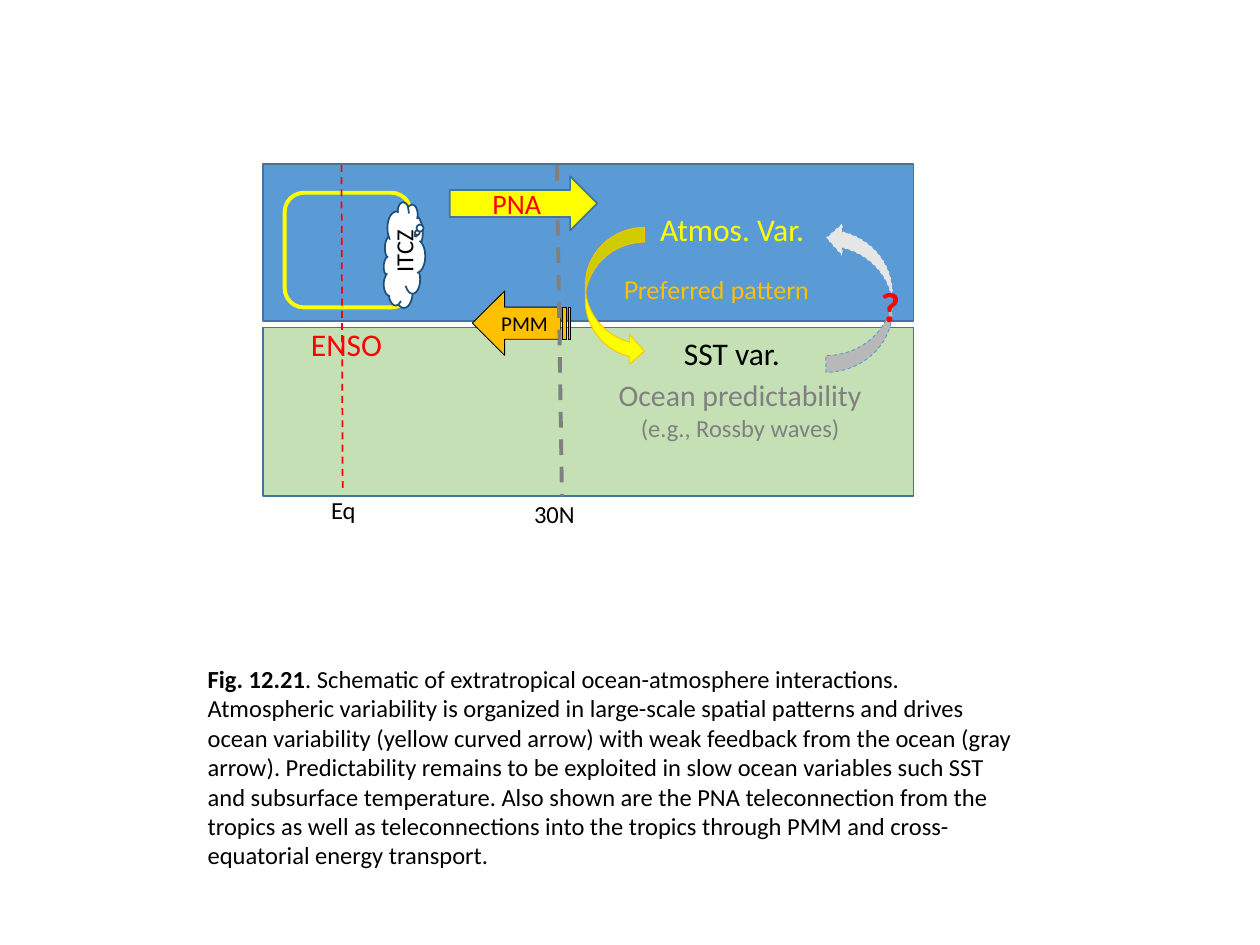
from pptx import Presentation
from pptx.dml.color import RGBColor
from pptx.enum.dml import MSO_LINE
from pptx.enum.shapes import MSO_CONNECTOR, MSO_SHAPE as SHAPE
from pptx.enum.text import MSO_ANCHOR, MSO_AUTO_SIZE, PP_ALIGN as ALIGN
from pptx.oxml.ns import qn
from pptx.oxml.xmlchemy import OxmlElement
from pptx.util import Inches, Pt

BLACK = RGBColor(0x00, 0x00, 0x00)
WHITE = RGBColor(0xFF, 0xFF, 0xFF)
RED = RGBColor(0xFF, 0x00, 0x00)
YELLOW = RGBColor(0xFF, 0xFF, 0x00)
ORANGE = RGBColor(0xFF, 0xC0, 0x00)
GRAY = RGBColor(0x80, 0x80, 0x80)
LIGHT_GRAY = RGBColor(0xE7, 0xE6, 0xE6)
SKY = RGBColor(0x5B, 0x9B, 0xD5)
SEA = RGBColor(0xC5, 0xE0, 0xB4)
BORDER = RGBColor(0x43, 0x73, 0x9E)
NAVY = RGBColor(0x1F, 0x4E, 0x79)


def place(box, left, top, width, height):
    """Turn a position relative to a box into slide lengths."""
    return (Inches(box[0] + left), Inches(box[1] + top),
            Inches(width), Inches(height))


def add_run(paragraph, text, size, color, bold=False, font="Calibri"):
    run = paragraph.add_run()
    run.text = text
    run.font.name = font
    run.font.size = Pt(size)
    run.font.bold = bold
    run.font.color.rgb = color


def add_text(slide, frame, runs, align=ALIGN.LEFT):
    text_frame = slide.shapes.add_textbox(*frame).text_frame
    text_frame.word_wrap = True
    text_frame.auto_size = MSO_AUTO_SIZE.SHAPE_TO_FIT_TEXT
    paragraph = text_frame.paragraphs[0]
    paragraph.alignment = align
    for run in runs:
        add_run(paragraph, *run)


def add_figure(slide, kind, frame, fill, line, width, flip="", rotation=0):
    shape = slide.shapes.add_shape(kind, *frame)
    shape.shadow.inherit = False
    if fill is None:
        shape.fill.background()
    else:
        shape.fill.solid()
        shape.fill.fore_color.rgb = fill
    shape.line.color.rgb = line
    shape.line.width = Pt(width)
    shape.rotation = rotation
    for axis in flip:
        shape._element.spPr.find(qn("a:xfrm")).set("flip" + axis, "1")
    return shape


def add_label(shape, text, size, color):
    text_frame = shape.text_frame
    text_frame.word_wrap = False
    text_frame.vertical_anchor = MSO_ANCHOR.MIDDLE
    paragraph = text_frame.paragraphs[0]
    paragraph.alignment = ALIGN.CENTER
    add_run(paragraph, text, size, color)


def add_latitude(slide, box, start, end, color, width):
    connector = slide.shapes.add_connector(
        MSO_CONNECTOR.STRAIGHT,
        Inches(box[0] + start[0]), Inches(box[1] + start[1]),
        Inches(box[0] + end[0]), Inches(box[1] + end[1]))
    connector.line.color.rgb = color
    connector.line.width = Pt(width)
    connector.line.dash_style = MSO_LINE.DASH
    connector._element.spPr.append(OxmlElement("a:effectLst"))


def add_layers(slide, box):
    add_figure(slide, SHAPE.RECTANGLE, place(box, 0, 1.3, 5.16, 1.34), SEA, BORDER, 1)
    add_figure(slide, SHAPE.RECTANGLE, place(box, 0, 0, 5.16, 1.25), SKY, BORDER, 1)


def add_extratropics(slide, box):
    # Atmosphere drives ocean, with weak feedback
    add_figure(slide, SHAPE.CURVED_UP_ARROW, place(box, 2.24, 0.82, 1.1, 0.47),
               YELLOW, ORANGE, 0.5, rotation=90)
    feedback = add_figure(slide, SHAPE.CURVED_UP_ARROW, place(box, 4.13, 0.79, 1.2, 0.53),
                          LIGHT_GRAY, SKY, 0.5, flip="HV", rotation=90)
    feedback.line.dash_style = MSO_LINE.DASH

    # Labels
    add_text(slide, place(box, 3.05, 0.32, 1.47, 0.4), [("Atmos. Var.", 18, YELLOW)])
    add_text(slide, place(box, 3.24, 1.3, 1.3, 0.4), [("SST var.", 18, BLACK)])
    add_text(slide, place(box, 2.76, 0.83, 2.02, 0.34),
             [("Preferred pattern", 14, ORANGE, False, "Lato")])
    add_text(slide, place(box, 2.62, 1.63, 2.33, 0.64),
             [("Ocean predictability", 17, GRAY), (" ", 18, GRAY),
              ("(e.g., Rossby waves)", 14, GRAY)], ALIGN.CENTER)
    add_text(slide, place(box, 4.8, 0.88, 0.48, 0.5), [("?", 24, RED, True)])


def add_tropics(slide, box):
    add_text(slide, place(box, 0.28, 1.23, 0.86, 0.4), [("ENSO", 18, RED)])
    # Overturning cell across the equator
    add_figure(slide, SHAPE.ROUNDED_RECTANGLE, place(box, 0.17, 0.23, 1, 0.91),
               None, YELLOW, 2.25)
    add_latitude(slide, box, (0.62, 0.01), (0.63, 2.6), RED, 1)
    # Convergence zone cloud
    cloud = add_figure(slide, SHAPE.CLOUD_CALLOUT, place(box, 0.7, 0.56, 0.84, 0.33),
                       WHITE, NAVY, 1, flip="V", rotation=90)
    cloud.adjustments[0] = -0.186
    cloud.adjustments[1] = 0.275
    add_label(cloud, "ITCZ", 14, BLACK)
    add_text(slide, place(box, 0.44, 2.58, 0.46, 0.34), [("Eq", 14, BLACK)])


def add_teleconnections(slide, box):
    # Into the tropics
    pmm = add_figure(slide, SHAPE.STRIPED_RIGHT_ARROW, place(box, 1.66, 1.01, 0.78, 0.51),
                     ORANGE, BLACK, 0.5, flip="H")
    add_label(pmm, "PMM", 12, BLACK)
    add_latitude(slide, box, (2.33, 0.01), (2.37, 2.64), GRAY, 2.25)
    add_text(slide, place(box, 2.05, 2.61, 0.66, 0.34), [("30N", 14, BLACK)])
    # Out of the tropics
    pna = add_figure(slide, SHAPE.RIGHT_ARROW, place(box, 1.48, 0.1, 1.17, 0.43),
                     YELLOW, BORDER, 1)
    add_label(pna, "PNA", 16, RED)


def add_caption(slide, box):
    add_text(slide, place(box, 0, 0, 6.65, 1.75), [
        ("Fig. 12.21", 14, BLACK, True),
        (". Schematic of extratropical ocean-atmosphere interactions. "
         "Atmospheric variability is organized in large-scale spatial patterns and "
         "drives ocean variability (yellow curved arrow) with weak feedback from the "
         "ocean (gray arrow). Predictability remains to be exploited in slow ocean "
         "variables such SST and subsurface temperature. Also shown are the PNA "
         "teleconnection from the tropics as well as teleconnections into the tropics "
         "through PMM and cross-equatorial energy transport.", 14, BLACK)])


def main():
    presentation = Presentation()
    presentation.slide_width = Inches(10)
    presentation.slide_height = Inches(7.5)
    slide = presentation.slides.add_slide(presentation.slide_layouts[6])
    diagram = (2.09, 1.3)
    add_layers(slide, diagram)
    add_extratropics(slide, diagram)
    add_tropics(slide, diagram)
    add_teleconnections(slide, diagram)
    add_caption(slide, (1.55, 5.22))
    presentation.save("out.pptx")


if __name__ == "__main__":
    main()
